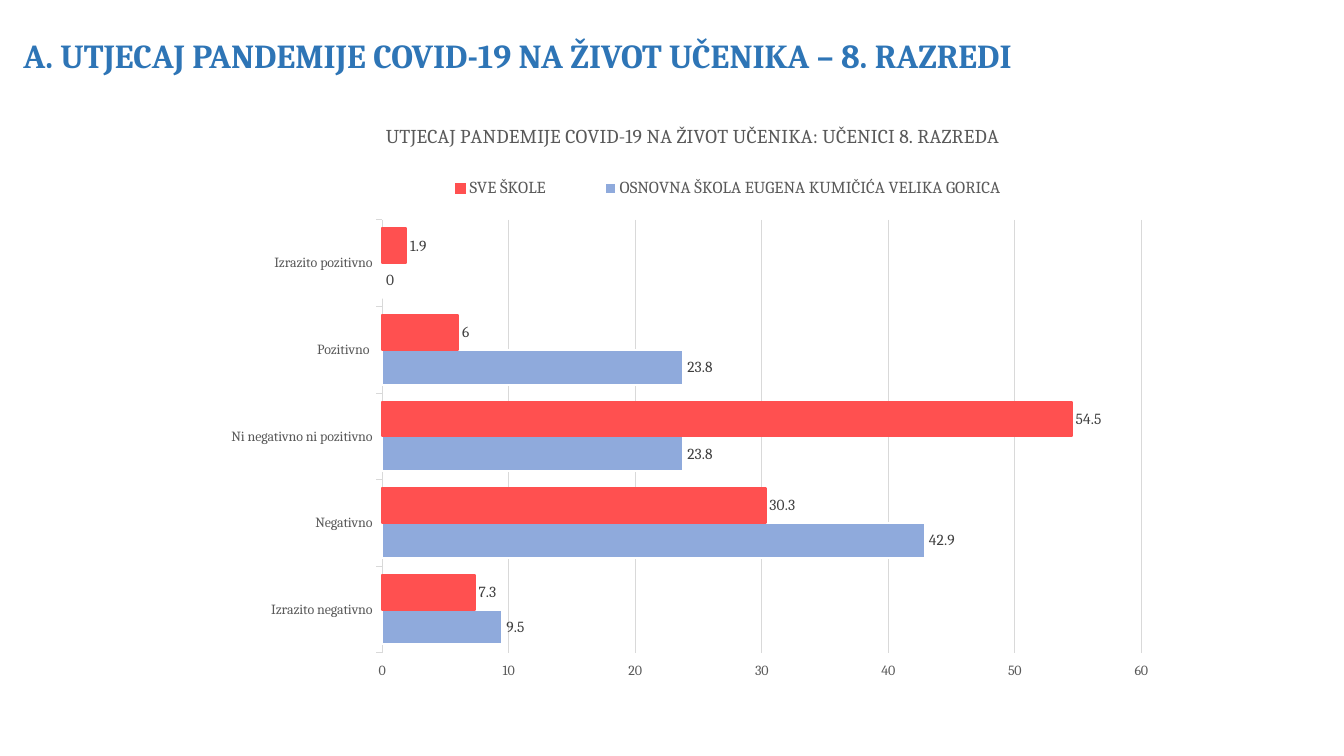
from lxml.etree import SubElement
from pptx import Presentation
from pptx.chart.data import CategoryChartData
from pptx.dml.color import RGBColor
from pptx.enum.chart import (XL_CHART_TYPE, XL_LABEL_POSITION,
                             XL_LEGEND_POSITION, XL_TICK_MARK)
from pptx.enum.text import MSO_AUTO_SIZE
from pptx.oxml.ns import qn
from pptx.util import Inches, Pt

W, H = Inches(13.33), Inches(7.5)
FONT = "Cambria"
COLORS = {
    "heading": "2E75B6",
    "text": "595959",
    "label": "404040",
    "grid": "D9D9D9",
    "school": "8FAADC",
    "school_edge": "FFFFFF",
    "all": "FF5050",
}
CATEGORIES = ["Izrazito negativno", "Negativno", "Ni negativno ni pozitivno",
              "Pozitivno ", "Izrazito pozitivno"]
# name, values, fill, outline
SERIES = [
    ("OSNOVNA ŠKOLA EUGENA KUMIČIĆA VELIKA GORICA",
     (9.5, 42.9, 23.8, 23.8, 0), "school", "school_edge"),
    ("SVE ŠKOLE", (7.3, 30.3, 54.5, 6, 1.9), "all", "all"),
]


def rgb(name):
    return RGBColor.from_string(COLORS[name])


def share(x, y, w, h):
    """Turn shares of the slide into lengths."""
    return int(x * W), int(y * H), int(w * W), int(h * H)


def set_font(font, size, color, bold=False):
    font.name, font.size, font.bold = FONT, Pt(size), bold
    font.color.rgb = rgb(color)


def set_line(line, color, width):
    line.color.rgb = rgb(color)
    line.width = Pt(width)


def set_layout(parent, index, inner=False, **places):
    """Place a chart part by shares of the chart area."""
    for old in parent.findall(qn("c:layout")):
        parent.remove(old)
    layout = SubElement(parent, qn("c:layout"))
    manual = SubElement(layout, qn("c:manualLayout"))
    if inner:
        SubElement(manual, qn("c:layoutTarget")).set("val", "inner")
    for key in "xy":
        SubElement(manual, qn(f"c:{key}Mode")).set("val", "edge")
    for key, value in places.items():
        SubElement(manual, qn(f"c:{key}")).set("val", str(value))
    parent.insert(index, layout)


def add_heading(s, text, box):
    tf = s.shapes.add_textbox(*box).text_frame
    tf.word_wrap = True
    tf.auto_size = MSO_AUTO_SIZE.SHAPE_TO_FIT_TEXT
    tf.text = text
    set_font(tf.paragraphs[0].runs[0].font, 24, "heading", True)


def style_axes(chart):
    cat, val = chart.category_axis, chart.value_axis
    for axis in (cat, val):
        axis.major_tick_mark = XL_TICK_MARK.OUTSIDE
        axis.minor_tick_mark = XL_TICK_MARK.NONE
        set_font(axis.tick_labels.font, 10, "text")
    set_line(cat.format.line, "grid", 0.75)
    val.format.line.fill.background()
    val.minimum_scale, val.maximum_scale, val.major_unit = 0, 60, 10
    val.has_major_gridlines = True
    set_line(val.major_gridlines.format.line, "grid", 0.75)


def style_series(series, fill, edge):
    series.format.fill.solid()
    series.format.fill.fore_color.rgb = rgb(fill)
    set_line(series.format.line, edge, 1.5)
    series.invert_if_negative = False
    labels = series.data_labels
    labels.show_value = True
    labels.position = XL_LABEL_POSITION.OUTSIDE_END
    set_font(labels.font, 11, "label")


def add_bar_chart(s, title, box):
    data = CategoryChartData()
    data.categories = CATEGORIES
    for name, values, *_ in SERIES:
        data.add_series(name, values)
    chart = s.shapes.add_chart(XL_CHART_TYPE.BAR_CLUSTERED, *box, data).chart
    chart.font.name, chart.font.size = FONT, Pt(10)

    # Bars and axes
    plot = chart.plots[0]
    plot.gap_width, plot.overlap, plot.vary_by_categories = 49, 0, False
    for series, (_, _, fill, edge) in zip(plot.series, SERIES):
        style_series(series, fill, edge)
    style_axes(chart)

    # Title and legend
    tf = chart.chart_title.text_frame
    tf.text = title
    set_font(tf.paragraphs[0].runs[0].font, 14, "text")
    chart.has_legend = True
    chart.legend.position = XL_LEGEND_POSITION.TOP
    chart.legend.include_in_layout = False
    set_font(chart.legend.font, 12, "text")

    # Places inside the chart area
    root = chart.element.find(qn("c:chart"))
    set_layout(root.find(qn("c:title")), 1, x=0.16, y=0.04)
    set_layout(root.find(qn("c:legend")), 1, x=0.18, y=0.12, w=0.68, h=0.06)
    set_layout(root.find(qn("c:plotArea")), 0, inner=True,
               x=0.16, y=0.2, w=0.79, h=0.69)


def main():
    prs = Presentation()
    prs.slide_width, prs.slide_height = W, H
    s = prs.slides.add_slide(prs.slide_layouts[6])
    add_heading(s, "A. UTJECAJ PANDEMIJE COVID-19 NA ŽIVOT UČENIKA – 8. RAZREDI",
                share(0.01, 0.04, 0.94, 0.07))
    add_bar_chart(
        s, "UTJECAJ PANDEMIJE COVID-19 NA ŽIVOT UČENIKA: UČENICI 8. RAZREDA",
        share(0.17, 0.125, 0.715, 0.83))
    prs.save("out.pptx")


if __name__ == "__main__":
    main()
